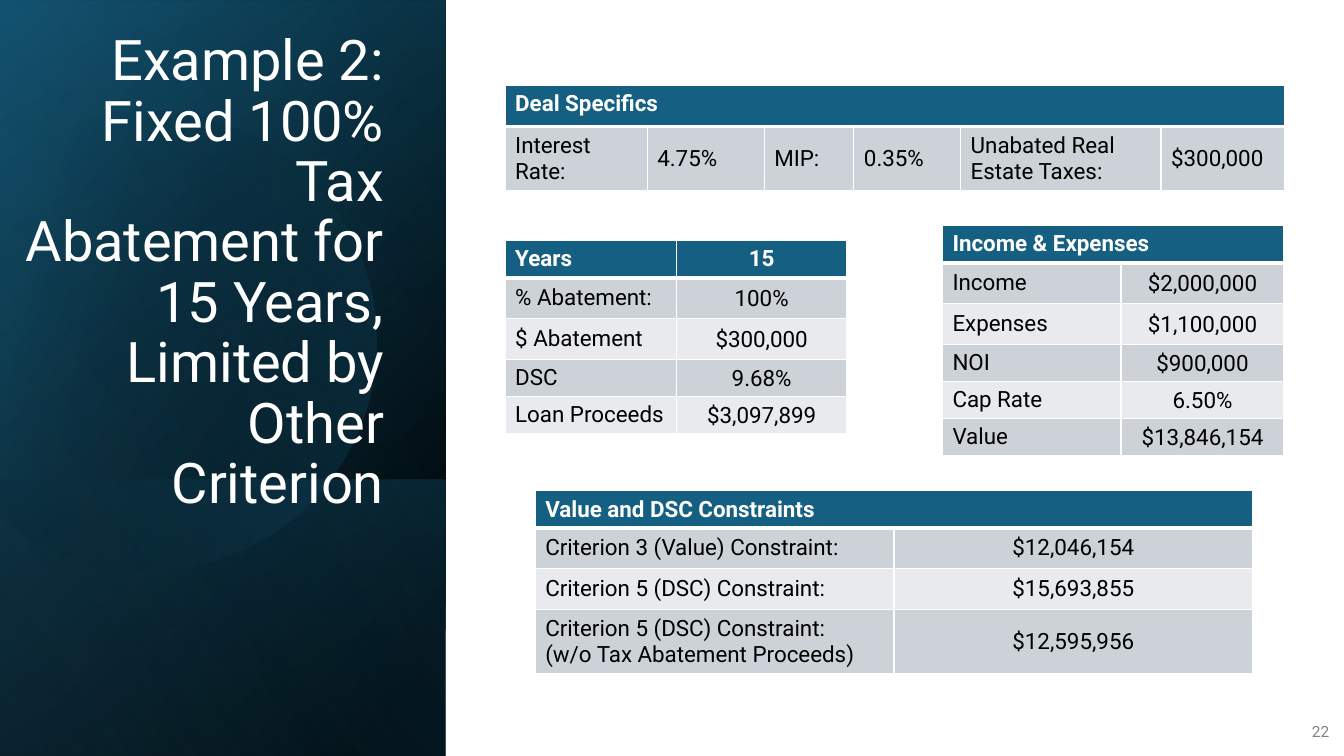
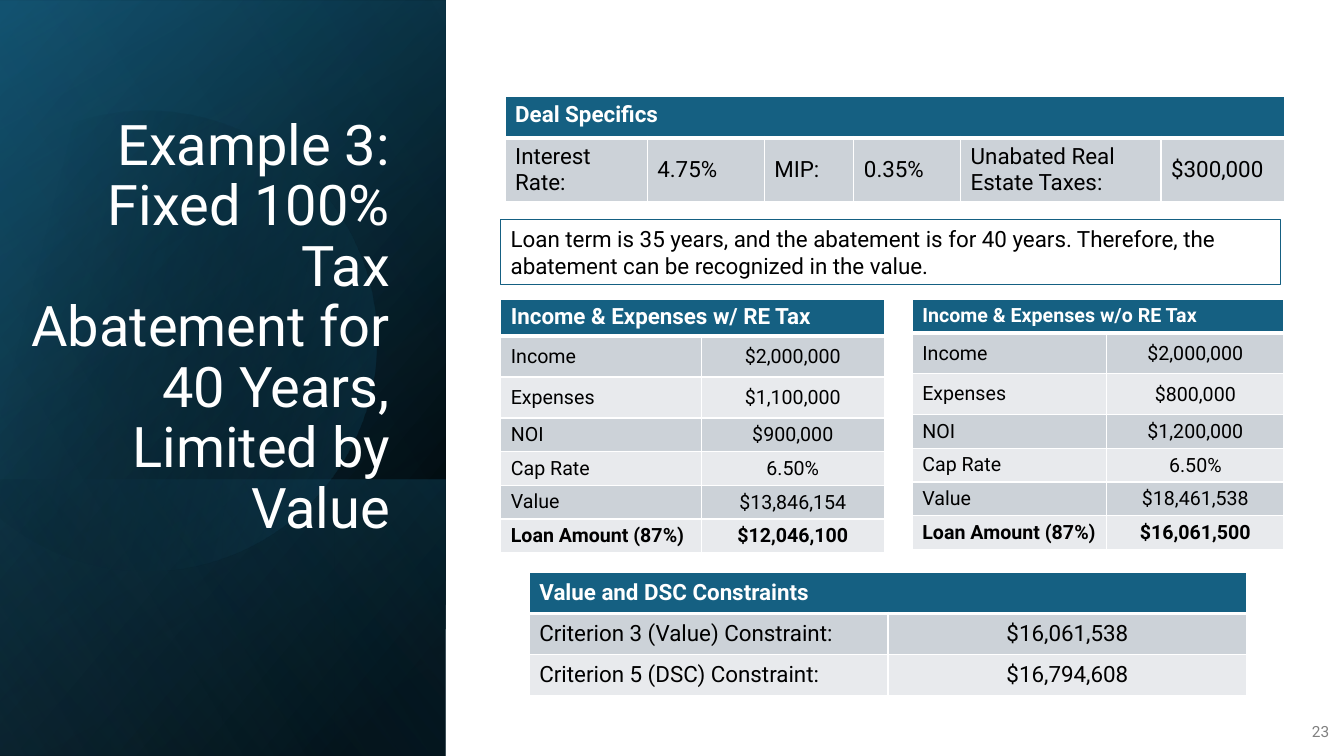
from dataclasses import dataclass
from math import cos, radians, sin

from lxml import etree
from pptx import Presentation
from pptx import util as u
from pptx.dml.color import RGBColor
from pptx.enum import shapes, text
from pptx.oxml.ns import qn

Cm, Pt = u.Cm, u.Pt
FONT = "Roboto"
WHITE, BLACK, GREY, TEAL = "FFFFFF", "000000", "808080", "156082"
BANDS = ("CCD2D8", "E8EAED")
LEFT, CENTER, RIGHT = text.PP_ALIGN.LEFT, text.PP_ALIGN.CENTER, text.PP_ALIGN.RIGHT
TOP, MIDDLE, BOTTOM = text.MSO_ANCHOR.TOP, text.MSO_ANCHOR.MIDDLE, text.MSO_ANCHOR.BOTTOM

# Row heights in cm
TALL, DOUBLE, MID, LOW, SMALL = 1.03, 1.55, 0.91, 0.84, 0.8


@dataclass
class Stop:
    pos: int
    color: str
    alpha: int = 100


@dataclass
class Panel:
    left: float
    top: float
    width: float
    height: float
    angle: int
    stops: tuple[Stop, Stop]


@dataclass
class Grid:
    left: float
    top: float
    cols: tuple[float, ...]
    heights: tuple[float, ...]
    rows: tuple[tuple[str, ...], ...]
    size: int = 16
    head_size: int = 16
    head_anchor: text.MSO_ANCHOR = TOP
    centred: bool = True   # centre every column but the first
    tight: bool = True     # almost no margins in the centred cells
    bold_last: bool = False


@dataclass
class Page:
    title: str
    title_box: tuple[float, float, float, float]
    number: int
    grids: tuple[Grid, ...]
    note: str = ""


# Side panel layers, each turned a quarter and flipped
SIDE = (19.05, 11.23)
PANELS = (
    Panel(-3.91, 3.91, *SIDE, 50, (Stop(8, BLACK), Stop(100, "104862"))),
    Panel(-3.91, 3.93, *SIDE, 30, (Stop(0, BLACK, 0), Stop(99, TEAL, 46))),
    Panel(2.13, 9.96, 6.96, 11.23, 130, (Stop(2, TEAL, 29), Stop(100, BLACK, 30))),
)
GLOW = Panel(-3.91, 3.89, *SIDE, 120, (Stop(0, BLACK, 0), Stop(99, "46B1E1", 11)))
DISC_STOPS = (Stop(29, BLACK, 0), Stop(100, TEAL, 43))


def rgb(color: str) -> RGBColor:
    return RGBColor.from_string(color)


def box(left: float, top: float, width: float, height: float) -> tuple:
    return Cm(left), Cm(top), Cm(width), Cm(height)


def style(p, size: int, color: str, align=LEFT, bold: bool = False) -> None:
    p.alignment = align
    f = p.font
    f.name, f.size, f.bold = FONT, Pt(size), bold
    f.color.rgb = rgb(color)


def gradient(sp, angle: int, stops: tuple[Stop, Stop]) -> None:
    """Fill with a linear gradient whose stops may be transparent."""
    sp.shadow.inherit = False
    sp.line.fill.background()
    sp.fill.background()
    old = sp._element.spPr.find(qn("a:noFill"))
    grad = etree.Element(qn("a:gradFill"), rotWithShape="1")
    gs_lst = etree.SubElement(grad, qn("a:gsLst"))
    for stop in stops:
        gs = etree.SubElement(gs_lst, qn("a:gs"), pos=str(stop.pos * 1000))
        clr = etree.SubElement(gs, qn("a:srgbClr"), val=stop.color)
        if stop.alpha < 100:
            etree.SubElement(clr, qn("a:alpha"), val=str(stop.alpha * 1000))
    etree.SubElement(grad, qn("a:lin"), ang=str(angle * 60000), scaled="0")
    old.getparent().replace(old, grad)


def add_rect(s, left: float, top: float, width: float, height: float):
    sp = s.shapes.add_shape(shapes.MSO_SHAPE.RECTANGLE, *box(left, top, width, height))
    sp.shadow.inherit = False
    return sp


def add_panel(s, panel: Panel) -> None:
    sp = add_rect(s, panel.left, panel.top, panel.width, panel.height)
    gradient(sp, panel.angle, panel.stops)
    sp.rotation = 90
    sp._element.spPr.find(qn("a:xfrm")).set("flipH", "1")


def add_disc(s) -> None:
    """Circle cut off by a chord, which the rotation makes upright."""
    cx, cy, radius, start, end, steps = 3.68, 8.48, 5.79, -118.5, 150.7, 90
    angles = [radians(start + (end - start) * i / steps) for i in range(steps + 1)]
    pts = [(Cm(cx + radius * cos(a)), Cm(cy + radius * sin(a))) for a in angles]
    fb = s.shapes.build_freeform(*pts[0])
    fb.add_line_segments(pts[1:], close=True)
    sp = fb.convert_to_shape()
    gradient(sp, 30, DISC_STOPS)
    sp.rotation = 343.9


def add_background(s) -> None:
    sp = add_rect(s, 0, 0, 33.87, 19.05)
    sp.fill.solid()
    sp.fill.fore_color.rgb = rgb(WHITE)
    sp.line.fill.background()
    for panel in PANELS:
        add_panel(s, panel)
    add_disc(s)
    add_panel(s, GLOW)


def add_title(s, title: str, place: tuple[float, float, float, float]) -> None:
    sp = s.shapes.title
    sp.left, sp.top, sp.width, sp.height = box(*place)
    s.shapes._spTree.append(sp._element)  # bring in front of the side panel
    tf = sp.text_frame
    tf.text = title
    tf.word_wrap, tf.auto_size = True, text.MSO_AUTO_SIZE.NONE
    tf.vertical_anchor = BOTTOM
    style(tf.paragraphs[0], 40, WHITE, RIGHT)
    tf.paragraphs[0].line_spacing = 0.9


def add_number(s, number: int) -> None:
    tf = s.shapes.add_textbox(*box(32.51, 17.93, 1.24, 1.02)).text_frame
    tf.text = str(number)
    tf.word_wrap, tf.vertical_anchor = True, MIDDLE
    style(tf.paragraphs[0], 11, GREY, RIGHT)
    tf.paragraphs[0].space_after = Pt(6)


def add_note(s, note: str) -> None:
    sp = add_rect(s, 12.62, 5.54, 19.66, 1.63)
    sp.fill.background()
    sp.line.color.rgb, sp.line.width = rgb(TEAL), Pt(0.75)
    tf = sp.text_frame
    tf.text = note
    tf.word_wrap, tf.vertical_anchor = True, MIDDLE
    style(tf.paragraphs[0], 16, BLACK)


def paint_cell(cell, fill: str, below: float = 1) -> None:
    """White borders, the lower one of the given width, and a solid fill."""
    tc_pr = cell._tc.get_or_add_tcPr()
    for side, width in (("L", 1), ("R", 1), ("T", 1), ("B", below)):
        ln = etree.SubElement(tc_pr, qn(f"a:ln{side}"), w=str(Pt(width)))
        solid = etree.SubElement(ln, qn("a:solidFill"))
        etree.SubElement(solid, qn("a:srgbClr"), val=WHITE)
    cell.fill.solid()
    cell.fill.fore_color.rgb = rgb(fill)


def add_grid(s, g: Grid) -> None:
    n_rows, n_cols = len(g.rows), len(g.cols)
    place = box(g.left, g.top, sum(g.cols), sum(g.heights))
    tbl = s.shapes.add_table(n_rows, n_cols, *place).table
    for col, width in zip(tbl.columns, g.cols):
        col.width = Cm(width)
    for row, height in zip(tbl.rows, g.heights):
        row.height = Cm(height)
    if len(g.rows[0]) == 1:
        tbl.cell(0, 0).merge(tbl.cell(0, n_cols - 1))
    for i, values in enumerate(g.rows):
        head = i == 0
        bold = head or (g.bold_last and i == n_rows - 1)
        for j in range(n_cols):
            cell = tbl.cell(i, j)
            centred = g.centred and j > 0
            cell.text = values[j] if j < len(values) else ""
            cell.vertical_anchor = g.head_anchor if head else MIDDLE
            if centred and g.tight and not head:
                cell.margin_left = cell.margin_top = cell.margin_right = Cm(0.02)
                cell.margin_bottom = 0
            for p in cell.text_frame.paragraphs:
                style(p, g.head_size if head else g.size, WHITE if head else BLACK,
                      CENTER if centred else LEFT, bold)
            paint_cell(cell, TEAL if head else BANDS[(i - 1) % 2], 3 if head else 1)


# Table kinds that occur on both slides
def deal_grid(top: float) -> Grid:
    return Grid(12.73, top, (3.58, 2.95, 2.26, 2.69, 5.05, 3.12), (TALL, DOUBLE), (
        ("Deal Specifics",),
        ("Interest Rate:", "4.75%", "MIP:", "0.35%",
         "Unabated Real Estate Taxes:", "$300,000"),
    ), centred=False)


def constraint_grid(left: float, top: float, heights: tuple[float, ...],
                    *rows: tuple[str, str]) -> Grid:
    return Grid(left, top, (9.04, 9.04), heights,
                (("Value and DSC Constraints",), *rows), head_anchor=MIDDLE, tight=False)


def income_grid(left: float, top: float, cols: tuple[float, float], title: str,
                expenses: str, noi: str, value: str, loan: str = "",
                head_size: int = 16) -> Grid:
    rows = [(title,), ("Income", "$2,000,000"), ("Expenses", expenses),
            ("NOI", noi), ("Cap Rate", "6.50%"), ("Value", value)]
    if loan:
        rows.append(("Loan Amount (87%)", loan))
    head = MID if head_size == 16 else SMALL
    body = LOW if loan else MID
    heights = (head, TALL, TALL) + (body,) * (len(rows) - 3)
    return Grid(left, top, cols, heights, tuple(rows), size=14 if loan else 16,
                head_size=head_size, bold_last=bool(loan))


PAGES = (
    Page(
        "Example 2: Fixed 100% Tax Abatement for 15 Years, Limited by Other Criterion",
        (0.38, 3.48, 9.55, 9.65), 22, (
            Grid(12.73, 6.07, (4.32, 4.29), (MID, TALL, TALL, MID, MID), (
                ("Years", "15"),
                ("% Abatement:", "100%"),
                ("$ Abatement", "$300,000"),
                ("DSC", "9.68%"),
                ("Loan Proceeds", "$3,097,899"),
            )),
            deal_grid(2.16),
            income_grid(23.75, 5.69, (4.5, 4.11), "Income & Expenses",
                        "$1,100,000", "$900,000", "$13,846,154"),
            constraint_grid(
                13.49, 12.37, (MID, TALL, TALL, DOUBLE),
                ("Criterion 3 (Value) Constraint:", "$12,046,154"),
                ("Criterion 5 (DSC) Constraint:", "$15,693,855"),
                ("Criterion 5 (DSC) Constraint:\n(w/o Tax Abatement Proceeds)",
                 "$12,595,956")),
        )),
    Page(
        "Example 3: Fixed 100% Tax Abatement for 40 Years, Limited by Value",
        (0.53, 4.34, 9.55, 9.4), 23, (
            deal_grid(2.44),
            income_grid(22.99, 7.54, (4.9, 4.47), "Income & Expenses w/o RE Tax",
                        "$800,000", "$1,200,000", "$18,461,538", "$16,061,500", 14),
            constraint_grid(
                13.34, 14.43, (TALL,) * 3,
                ("Criterion 3 (Value) Constraint:", "$16,061,538"),
                ("Criterion 5 (DSC) Constraint:", "$16,794,608")),
            income_grid(12.62, 7.54, (5.05, 4.62), "Income & Expenses w/ RE Tax",
                        "$1,100,000", "$900,000", "$13,846,154", "$12,046,100"),
        ),
        "Loan term is 35 years, and the abatement is for 40 years. "
        "Therefore, the abatement can be recognized in the value."),
)


def main() -> None:
    prs = Presentation()
    prs.slide_width, prs.slide_height = Cm(33.87), Cm(19.05)
    for page in PAGES:
        s = prs.slides.add_slide(prs.slide_layouts[5])
        add_background(s)
        add_title(s, page.title, page.title_box)
        add_number(s, page.number)
        for grid in page.grids:
            add_grid(s, grid)
        if page.note:
            add_note(s, page.note)
    prs.save("out.pptx")


if __name__ == "__main__":
    main()
